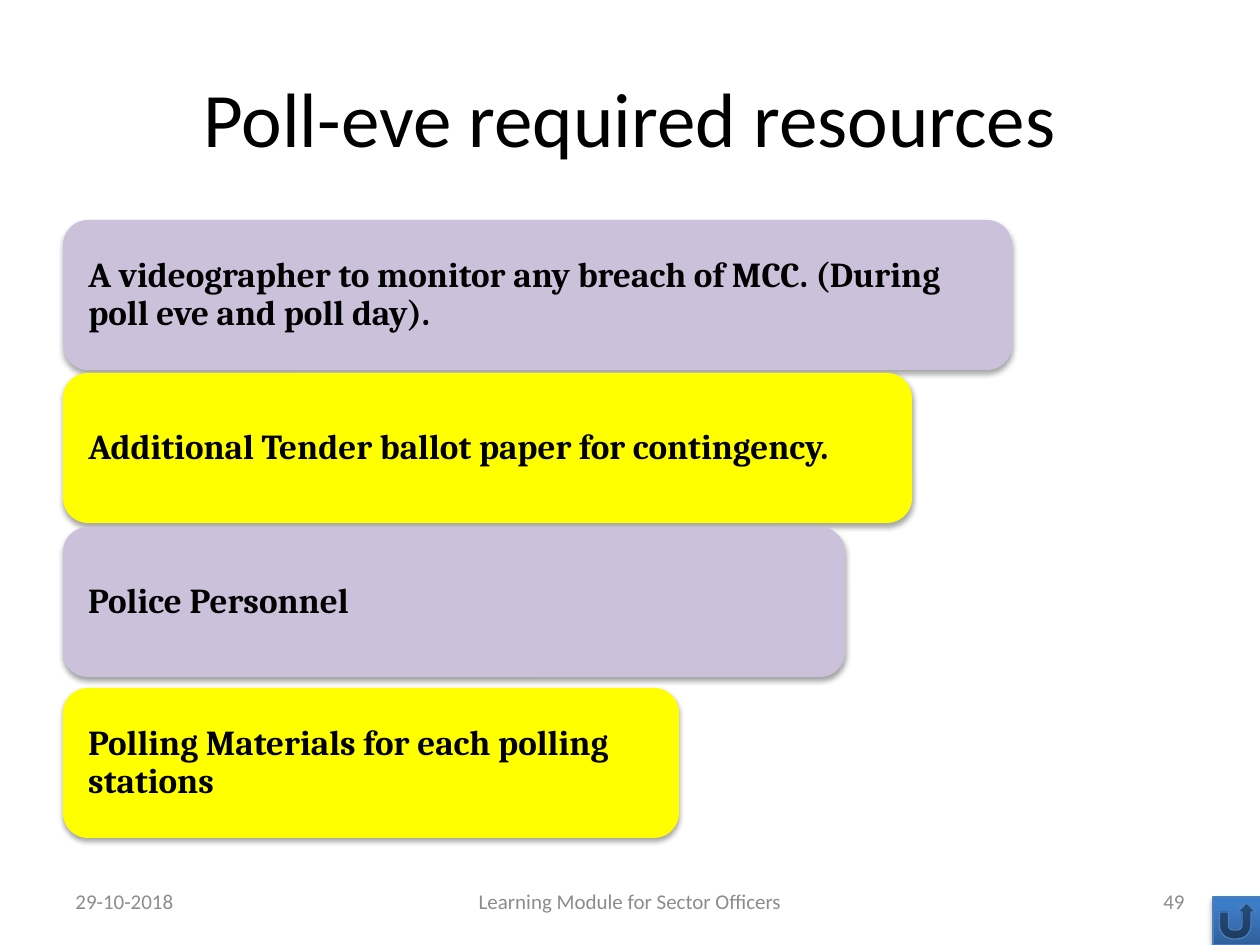
from copy import deepcopy
from dataclasses import dataclass

from lxml.etree import SubElement
from pptx import Presentation
from pptx.dml.color import RGBColor as RGB
from pptx.enum.shapes import MSO_SHAPE as Preset
from pptx.enum.text import MSO_ANCHOR as Anchor, PP_ALIGN as Align
from pptx.oxml.ns import qn
from pptx.util import Emu, Pt

PX = 914400 / 126


def px(length):
    return Emu(round(length * PX))


def apply(target, values):
    for name, value in values.items():
        setattr(target, name, value)


@dataclass(frozen=True)
class Theme:
    ink = RGB.from_string("000000")
    muted = RGB.from_string("8C8C8C")
    lilac = RGB.from_string("CCC1DA")
    yellow = RGB.from_string("FFFF00")
    button_edge = RGB.from_string("4B7EBC")
    button_stops = ((0, "2F5F99"), (0.8, "3D7CC7"), (1, "3A7CCB"))
    title = {"name": "Calibri", "size": Pt(44)}
    resource = {"name": "Cambria", "size": Pt(20), "bold": True}
    footer = {"name": "Calibri", "size": Pt(12)}


class ResourceSlide:
    def __init__(self, deck, theme):
        self.theme = theme
        self.slide = deck.slides.add_slide(deck.slide_layouts[5])

    def set_words(self, frame, words, font, color, align):
        frame.text = words
        apply(frame, {"word_wrap": True, "vertical_anchor": Anchor.MIDDLE})
        line = frame.paragraphs[0]
        line.alignment = align
        apply(line.font, font)
        line.font.color.rgb = color
        return line

    def cast_shadow(self, shape):
        shape.shadow.inherit = False
        effects = shape._element.spPr.find(qn("a:effectLst"))
        shadow = SubElement(effects, qn("a:outerShdw"), blurRad=str(Pt(3.1)),
                            dist=str(Pt(1.8)), dir="5400000", rotWithShape="0")
        black = SubElement(shadow, qn("a:srgbClr"), val="000000")
        SubElement(black, qn("a:alpha"), val="35000")

    def title(self, words, *box):
        heading = self.slide.shapes.title
        apply(heading, dict(zip(("left", "top", "width", "height"), map(px, box))))
        self.set_words(heading.text_frame, words, self.theme.title,
                       self.theme.ink, Align.CENTER)

    def bar(self, words, color, *box):
        bar = self.slide.shapes.add_shape(Preset.ROUNDED_RECTANGLE, *map(px, box))
        bar.fill.solid()
        bar.fill.fore_color.rgb = color
        bar.line.fill.background()
        self.cast_shadow(bar)
        apply(bar.text_frame, {"margin_left": px(18), "margin_right": px(18)})
        line = self.set_words(bar.text_frame, words, self.theme.resource,
                              self.theme.ink, Align.LEFT)
        line.line_spacing = 0.9

    def footer(self, words, align, *box):
        note = self.slide.shapes.add_textbox(*map(px, box))
        self.set_words(note.text_frame, words, self.theme.footer,
                       self.theme.muted, align)

    def return_button(self, *box):
        button = self.slide.shapes.add_shape(Preset.ACTION_BUTTON_RETURN,
                                             *map(px, box))
        button.fill.gradient()
        button.fill.gradient_angle = 90
        stop_list = button._element.spPr.find(".//" + qn("a:gsLst"))
        stop_list.append(deepcopy(stop_list[-1]))
        for stop, (position, color) in zip(button.fill.gradient_stops,
                                           self.theme.button_stops):
            stop.position = position
            stop.color.rgb = RGB.from_string(color)
        button.line.color.rgb = self.theme.button_edge
        button.line.width = Pt(0.75)
        self.cast_shadow(button)


def main():
    deck = Presentation()
    apply(deck, {"slide_width": px(1260), "slide_height": px(945)})
    theme = Theme()
    page = ResourceSlide(deck, theme)
    page.title("Poll-eve required resources", 63, 38, 1134, 157)

    resources = (
        ("A videographer to monitor any breach of MCC. "
         "(During poll eve and poll day).", theme.lilac, 220, 949),
        ("Additional Tender ballot paper for contingency.", theme.yellow, 373, 849),
        ("Police Personnel", theme.lilac, 527, 782),
        ("Polling Materials for each polling stations", theme.yellow, 688, 616),
    )
    for words, color, top, width in resources:
        page.bar(words, color, 63, top, width, 150)

    footers = (
        ("29-10-2018", Align.LEFT, 63, 294),
        ("Learning Module for Sector Officers", Align.CENTER, 430, 400),
        ("49", Align.RIGHT, 903, 294),
    )
    for words, align, left, width in footers:
        page.footer(words, align, left, 876, width, 50)

    page.return_button(1213, 897, 49, 48)
    deck.save("out.pptx")


if __name__ == "__main__":
    main()
